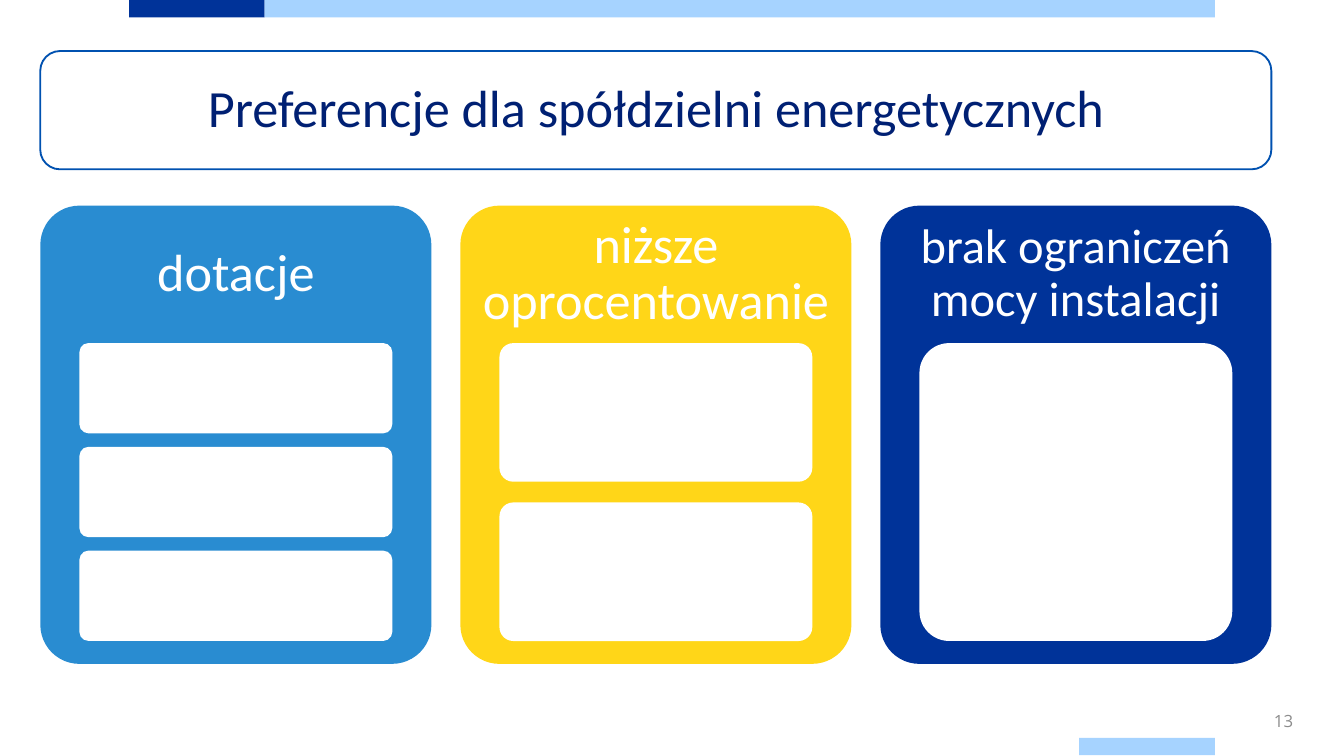
from pptx import Presentation
from pptx.dml.color import RGBColor
from pptx.enum.shapes import MSO_SHAPE as Shape
from pptx.enum.text import MSO_ANCHOR as Anchor, PP_ALIGN as Align
from pptx.util import Pt

PX = 9144
COLORS = {
    "navy": "003399",
    "sky": "A6D3FF",
    "blue": "298CD1",
    "yellow": "FFD618",
    "white": "FFFFFF",
    "outline": "0051B0",
    "title": "002073",
    "grey": "8C8C8C",
}
COLUMNS = [
    ("dotacje", "blue", 28, 3),
    ("niższe oprocentowanie", "yellow", 28, 2),
    ("brak ograniczeń mocy instalacji", "navy", 26, 1),
]


def color(name):
    return RGBColor.from_string(COLORS[name])


def emu(box):
    return [round(length * PX) for length in box]


def add_block(slide, kind, box, fill, line=None):
    shape = slide.shapes.add_shape(kind, *emu(box))
    shape.shadow.inherit = False
    shape.fill.solid()
    shape.fill.fore_color.rgb = color(fill)
    if line:
        shape.line.color.rgb = color(line)
        shape.line.width = Pt(1)
    else:
        shape.line.fill.background()
    return shape


def add_label(slide, box, text, size, ink, align=Align.CENTER,
              font="Calibri", inset=12, spacing=0.9):
    frame = slide.shapes.add_textbox(*emu(box)).text_frame
    frame.word_wrap = True
    frame.vertical_anchor = Anchor.MIDDLE
    frame.margin_left = frame.margin_right = inset * PX
    frame.margin_top = frame.margin_bottom = inset * PX
    paragraph = frame.paragraphs[0]
    paragraph.alignment = align
    paragraph.line_spacing = spacing
    run = paragraph.add_run()
    run.text = text
    run.font.name = font
    run.font.size = Pt(size)
    run.font.color.rgb = color(ink)


def add_bands(slide, box):
    left, top, width, height = box
    band, short = 13, 101
    add_block(slide, Shape.RECTANGLE, (left, top, short, band), "navy")
    add_block(slide, Shape.RECTANGLE,
              (left + short, top, width - short, band), "sky")
    add_block(slide, Shape.RECTANGLE,
              (left + width - short, top + height - band, short, band), "sky")


def add_title(slide, box, text):
    left, top, width, height = box
    add_block(slide, Shape.ROUNDED_RECTANGLE, box, "white", "outline")
    add_label(slide, (left + 4, top + 4, width - 8, height - 8),
              text, 28, "title")


def add_column(slide, box, heading, fill, size, count):
    left, top, width, height = box
    column = add_block(slide, Shape.ROUNDED_RECTANGLE, box, fill)
    column.adjustments[0] = 0.1
    add_label(slide, (left, top, width, height * 0.3), heading, size, "white",
              inset=11)
    card_height = height * 0.65 / (count + 0.15 * (count - 1))
    for index in range(count):
        card_top = top + height * 0.3 + index * card_height * 1.15
        card = add_block(
            slide, Shape.ROUNDED_RECTANGLE,
            (left + width * 0.1, card_top, width * 0.8, card_height), "white")
        card.adjustments[0] = 0.1


def add_columns(slide, box):
    left, top, width, height = box
    column_width = 291
    step = (width - column_width) / (len(COLUMNS) - 1)
    for index, column in enumerate(COLUMNS):
        add_column(slide, (left + index * step, top, column_width, height),
                   *column)


def add_page_number(slide, box, number):
    add_label(slide, box, number, 9, "grey", Align.RIGHT, "Open Sans", 10, 1.0)


def main():
    presentation = Presentation()
    presentation.slide_width, presentation.slide_height = emu((1000, 562.5))
    slide = presentation.slides.add_slide(presentation.slide_layouts[6])
    add_bands(slide, (96, 0, 808, 562))
    add_columns(slide, (30, 153, 916, 341))
    add_page_number(slide, (817, 521, 155, 30), "13")
    add_title(slide, (30, 38, 916, 88),
              "Preferencje dla spółdzielni energetycznych")
    presentation.save("out.pptx")


if __name__ == "__main__":
    main()
